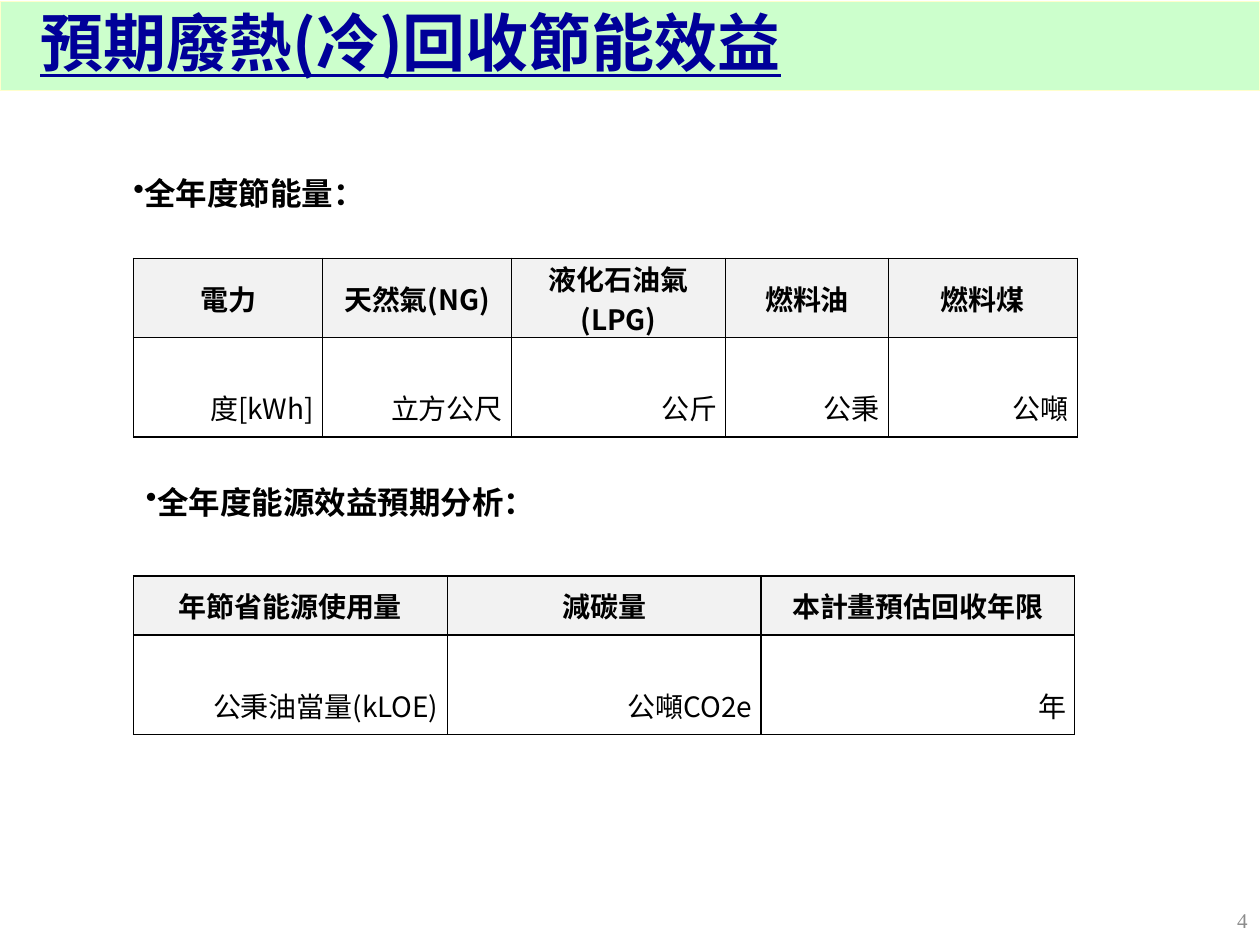
from dataclasses import dataclass

from lxml.etree import SubElement
from pptx import Presentation
from pptx.dml.color import RGBColor as Rgb
from pptx.enum.text import MSO_ANCHOR as Anchor, PP_ALIGN as Align
from pptx.oxml import parse_xml
from pptx.oxml.ns import nsdecls, qn
from pptx.util import Inches, Pt


@dataclass(frozen=True)
class Theme:
    font: str = "Noto Sans CJK SC"
    number_font: str = "Times New Roman"
    ink: str = "000000"
    title_ink: str = "000099"
    number_ink: str = "8C8C8C"
    band: str = "CCFFCC"
    band_edge: str = "FFFFCC"
    header: str = "F2F2F2"
    title_size: int = 36
    heading_size: int = 18
    cell_size: int = 16
    number_size: int = 12


def write(paragraph, text, size, color, bold=False, font=Theme.font):
    run = paragraph.add_run()
    run.text = text
    run.font.size = Pt(size)
    run.font.bold = bold
    run.font.color.rgb = Rgb.from_string(color)
    run.font.name = font
    SubElement(run.font._element, qn("a:ea"), typeface=font)
    return run


def add_box(left, top, width, height):
    frame = slide.shapes.add_textbox(*map(Inches, (left, top, width, height))).text_frame
    frame.word_wrap = True
    frame.vertical_anchor = Anchor.MIDDLE
    return frame.paragraphs[0]


theme = Theme()
WIDTH, HEIGHT = 10, 7.5
LEFT = 1.06
UNIT_ROW = 0.79
LINE_HEIGHT = 0.32

deck = Presentation()
deck.slide_width, deck.slide_height = Inches(WIDTH), Inches(HEIGHT)
slide = deck.slides.add_slide(deck.slide_layouts[5])

title = slide.shapes.title
title.left, title.top, title.width, title.height = map(Inches, (0, 0.01, WIDTH, 0.71))
title.fill.solid()
title.fill.fore_color.rgb = Rgb.from_string(theme.band)
title.line.color.rgb = Rgb.from_string(theme.band_edge)
title.line.width = Pt(0.75)
title.text_frame.vertical_anchor = Anchor.MIDDLE
title.text_frame.margin_left = Inches(0.32)
title_line = title.text_frame.paragraphs[0]
title_line.alignment = Align.LEFT
title_line.line_spacing = 0.9
write(title_line, "預期廢熱(冷)回收節能效益", theme.title_size, theme.title_ink, True).font.underline = True

savings = [("電力", "度[kWh]"), ("天然氣(NG)", "立方公尺"), ("液化石油氣(LPG)", "公斤"),
           ("燃料油", "公秉"), ("燃料煤", "公噸")]
benefits = [("年節省能源使用量", "公秉油當量(kLOE)"), ("減碳量", "公噸CO2e"),
            ("本計畫預估回收年限", "年")]
sections = [
    ("全年度節能量：", 0.96, 1.33, 2.05, 0.63, [1.5, 1.5, 1.7, 1.29, 1.5], savings),
    ("全年度能源效益預期分析：", LEFT, 3.78, 4.57, 0.47, [2.49] * 3, benefits),
]

for heading, heading_left, heading_top, top, header_row, columns, entries in sections:
    heading_line = add_box(heading_left, heading_top, 6.54, 0.4)
    SubElement(heading_line._p.get_or_add_pPr(), qn("a:buChar"), char="•")
    write(heading_line, heading, theme.heading_size, theme.ink, True)

    rows = [header_row, UNIT_ROW]
    table = slide.shapes.add_table(
        2, len(columns), *map(Inches, (LEFT, top, sum(columns), sum(rows)))).table
    for row, height in zip(table.rows, rows):
        row.height = Inches(height)
    for index, (width, entry) in enumerate(zip(columns, entries)):
        table.columns[index].width = Inches(width)
        for level, label in enumerate(entry):
            is_header = level == 0
            cell = table.cell(level, index)
            cell.vertical_anchor = Anchor.MIDDLE
            cell.margin_left = cell.margin_right = Inches(0.07)
            cell.margin_top = Inches(0 if is_header else LINE_HEIGHT)
            cell.margin_bottom = 0
            if is_header:
                cell.fill.solid()
                cell.fill.fore_color.rgb = Rgb.from_string(theme.header)
            else:
                cell.fill.background()
            for place, side in enumerate(("lnL", "lnR", "lnT", "lnB")):
                cell._tc.get_or_add_tcPr().insert(place, parse_xml(
                    f'<a:{side} {nsdecls("a")} w="{Pt(1)}"><a:solidFill>'
                    f'<a:srgbClr val="{theme.ink}"/></a:solidFill></a:{side}>'))
            label_line = cell.text_frame.paragraphs[0]
            label_line.alignment = Align.CENTER if is_header else Align.RIGHT
            write(label_line, label, theme.cell_size, theme.ink, is_header)

page_number = add_box(7.75, 7.1, 2.25, 0.4)
page_number.alignment = Align.RIGHT
write(page_number, "4", theme.number_size, theme.number_ink, font=theme.number_font)

deck.save("out.pptx")
